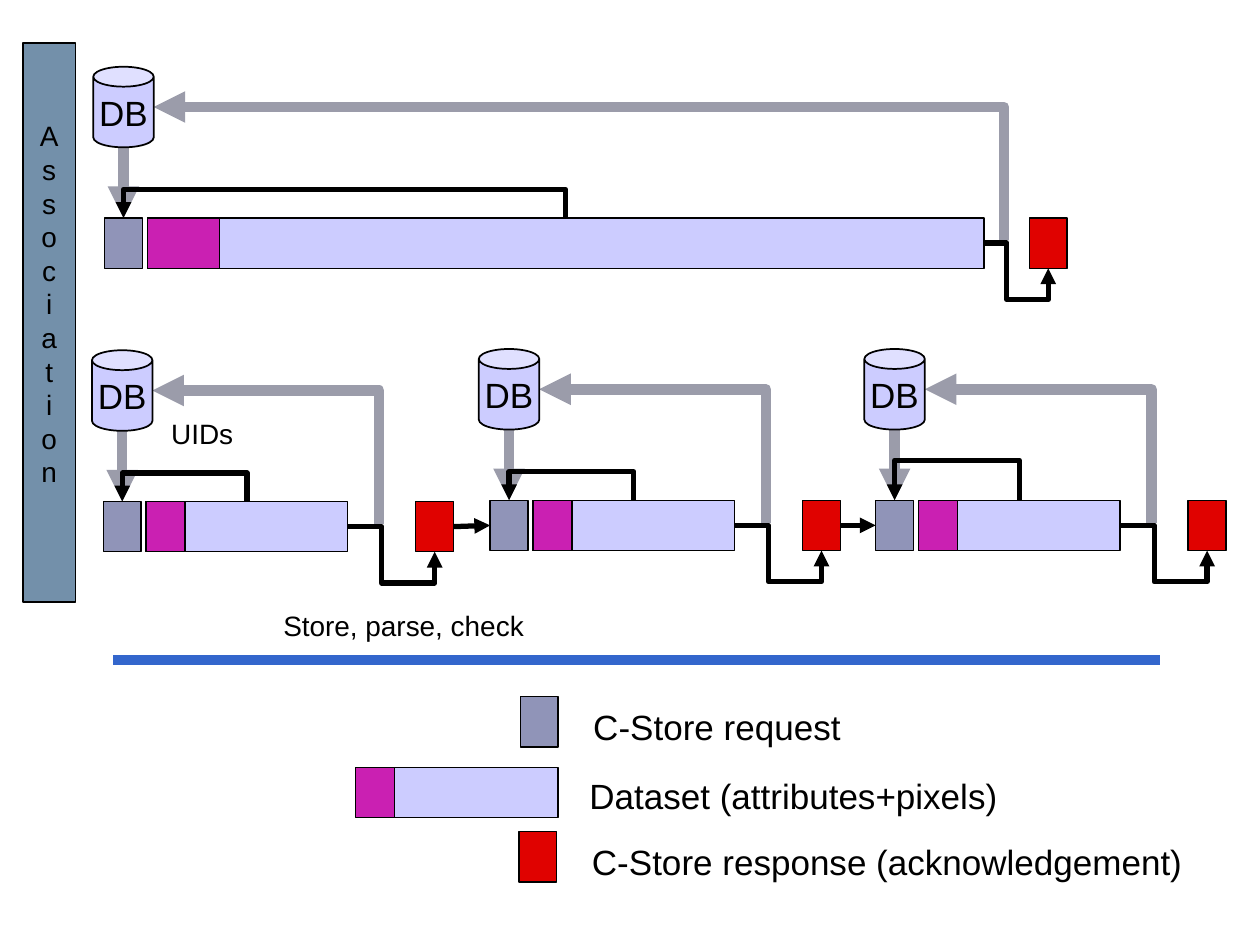
from lxml import etree
from pptx import Presentation
from pptx.dml.color import RGBColor
from pptx.enum.shapes import MSO_CONNECTOR, MSO_SHAPE
from pptx.enum.text import MSO_ANCHOR, MSO_AUTO_SIZE, PP_ALIGN
from pptx.oxml.ns import qn
from pptx.util import Inches, Pt

RECT, CAN = MSO_SHAPE.RECTANGLE, MSO_SHAPE.CAN
STRAIGHT, ELBOW = MSO_CONNECTOR.STRAIGHT, MSO_CONNECTOR.ELBOW

BLACK, GRAY, BLUE, SLATE = "000000", "9B9CAA", "3366CC", "7390AA"
REQUEST, RESPONSE = "9094B8", "E00200"
PIXELS, ATTRIBUTES = "CCCCFF", "CA20B2"
BOX_W, BOX_H = 0.3, 0.4
HAIR = 0.125 / 72  # thin side of the loop connector, an eighth of a point

# Transfers: request left, top, dataset width, attributes width, gap, loop rise
TRANSFERS = [
    (0.82, 3.98, 1.6, 0.31, 0.27, 0.25),
    (3.89, 3.97, 1.6, 0.31, 0.27, 0.25),
    (6.95, 3.97, 1.6, 0.31, 0.27, 0.35),
    (0.83, 1.73, 6.64, 0.57, 0.18, 0.25),
]
NEXT_ARROWS = [((3.59, 4.18), (3.89, 4.17)), ((6.67, 4.17), (6.95, 4.17))]
LEGEND_BOXES = [
    (4.13, 5.53, BOX_W, REQUEST),
    (2.83, 6.09, 1.6, PIXELS),
    (2.82, 6.09, 0.31, ATTRIBUTES),
    (4.12, 6.6, BOX_W, RESPONSE),
]
# Labels: text, left, top, width, height, size
LABELS = [
    ("C-Store request", 4.61, 5.55, 2.18, 0.44, 20),
    ("Dataset (attributes+pixels)", 4.58, 6.1, 3.47, 0.44, 20),
    ("C-Store response (acknowledgement)", 4.6, 6.62, 4.93, 0.44, 20),
    ("UIDs", 1.26, 3.26, 0.69, 0.37, 16),
    ("Store, parse, check", 2.15, 4.78, 2.22, 0.37, 16),
]


def rgb(color):
    return RGBColor.from_string(color)


def write(frame, text, size, align=PP_ALIGN.LEFT):
    frame.word_wrap = False
    paragraph = frame.paragraphs[0]
    paragraph.text = text
    paragraph.alignment = align
    for run in paragraph.runs:
        run.font.size = Pt(size)
        run.font.name = "Arial"
        run.font.color.rgb = rgb(BLACK)


def add_box(shapes, left, top, width, height, fill,
            kind=RECT, line=0.75, text="", size=20):
    box = shapes.add_shape(kind, Inches(left), Inches(top), Inches(width), Inches(height))
    box.shadow.inherit = False
    box.fill.solid()
    box.fill.fore_color.rgb = rgb(fill)
    box.line.color.rgb = rgb(BLACK)
    box.line.width = Pt(line)
    if text:
        box.text_frame.vertical_anchor = MSO_ANCHOR.MIDDLE
        write(box.text_frame, text, size, PP_ALIGN.CENTER)
    return box


def add_line(shapes, start, end, color=BLACK, width=3, arrow=True, bends=()):
    line = shapes.add_connector(ELBOW if bends else STRAIGHT,
                                *(Inches(v) for v in (*start, *end)))
    line.line.color.rgb = rgb(color)
    line.line.width = Pt(width)
    properties = line._element.spPr
    etree.SubElement(properties, qn("a:effectLst"))
    if arrow:
        etree.SubElement(properties.find(qn("a:ln")), qn("a:tailEnd"), type="triangle")
    if bends:
        geometry = properties.find(qn("a:prstGeom"))
        geometry.set("prst", f"bentConnector{len(bends) + 2}")
        for number, bend in enumerate(bends, 1):
            etree.SubElement(geometry.find(qn("a:avLst")), qn("a:gd"),
                             name=f"adj{number}", fmla=f"val {round(bend * 100000)}")
    return line


def add_loop(shapes, start_x, end_x, y, rise):
    """Arrow that leaves upwards, runs left and comes down at the same height."""
    middle, half = (start_x + end_x) / 2, (start_x - end_x) / 2
    loop = add_line(shapes, (middle, y - half), (middle + HAIR, y + half),
                    bends=(rise / HAIR,))
    frame = loop._element.spPr.find(qn("a:xfrm"))
    frame.set("rot", "5400000")
    frame.set("flipH", "1")


def add_transfer(shapes, left, top, dataset_w, attributes_w, gap, rise):
    center = left + BOX_W / 2
    dataset = left + 0.34
    dataset_end = dataset + dataset_w
    turn = dataset_end + gap
    response = turn + gap
    db_left, db_top, db_w, db_h = left - 0.09, top - 1.2, 0.48, 0.64
    db_right, db_middle = db_left + db_w, db_top + db_h / 2

    # Database traffic
    add_line(shapes, (turn, top + 0.18), (db_right, db_middle), GRAY, 6,
             bends=(0.02 / (turn - db_right),))
    add_line(shapes, (center, db_top + db_h), (center, top), GRAY, 6)

    # Request, response and the arrows around the dataset
    add_box(shapes, left, top, BOX_W, BOX_H, REQUEST)
    add_box(shapes, response, top, BOX_W, BOX_H, RESPONSE)
    end_x = response + BOX_W / 2
    add_line(shapes, (dataset_end, top + BOX_H / 2), (end_x, top + BOX_H),
             bends=(gap / (end_x - dataset_end), 2.24))
    add_loop(shapes, dataset + dataset_w / 2, center, top, rise)

    # Database and dataset
    db = add_box(shapes, db_left, db_top, db_w, db_h, PIXELS, CAN, 1, "DB")
    db.adjustments[0] = 0.33
    add_box(shapes, dataset, top, dataset_w, BOX_H, PIXELS)
    add_box(shapes, dataset, top, attributes_w, BOX_H, ATTRIBUTES)


def main():
    deck = Presentation()
    deck.slide_width, deck.slide_height = Inches(10), Inches(7.5)
    shapes = deck.slides.add_slide(deck.slide_layouts[6]).shapes

    # Legend and labels
    for left, top, width, fill in LEGEND_BOXES:
        add_box(shapes, left, top, width, BOX_H, fill)
    for text, left, top, width, height, size in LABELS:
        label = shapes.add_textbox(Inches(left), Inches(top), Inches(width), Inches(height))
        write(label.text_frame, text, size)
        label.text_frame.auto_size = MSO_AUTO_SIZE.SHAPE_TO_FIT_TEXT
    add_line(shapes, (0.9, 5.24), (9.21, 5.24), BLUE, 6, arrow=False)

    # Association bar, one letter a line
    letters = "".join(letter + "\v" for letter in "Association")
    add_box(shapes, 0.18, 0.34, 0.42, 4.44, SLATE, line=1, text=letters, size=16)

    # Transfers and the arrows between them
    for start, end in NEXT_ARROWS:
        add_line(shapes, start, end)
    for transfer in TRANSFERS:
        add_transfer(shapes.add_group_shape().shapes, *transfer)

    deck.save("out.pptx")


if __name__ == "__main__":
    main()
